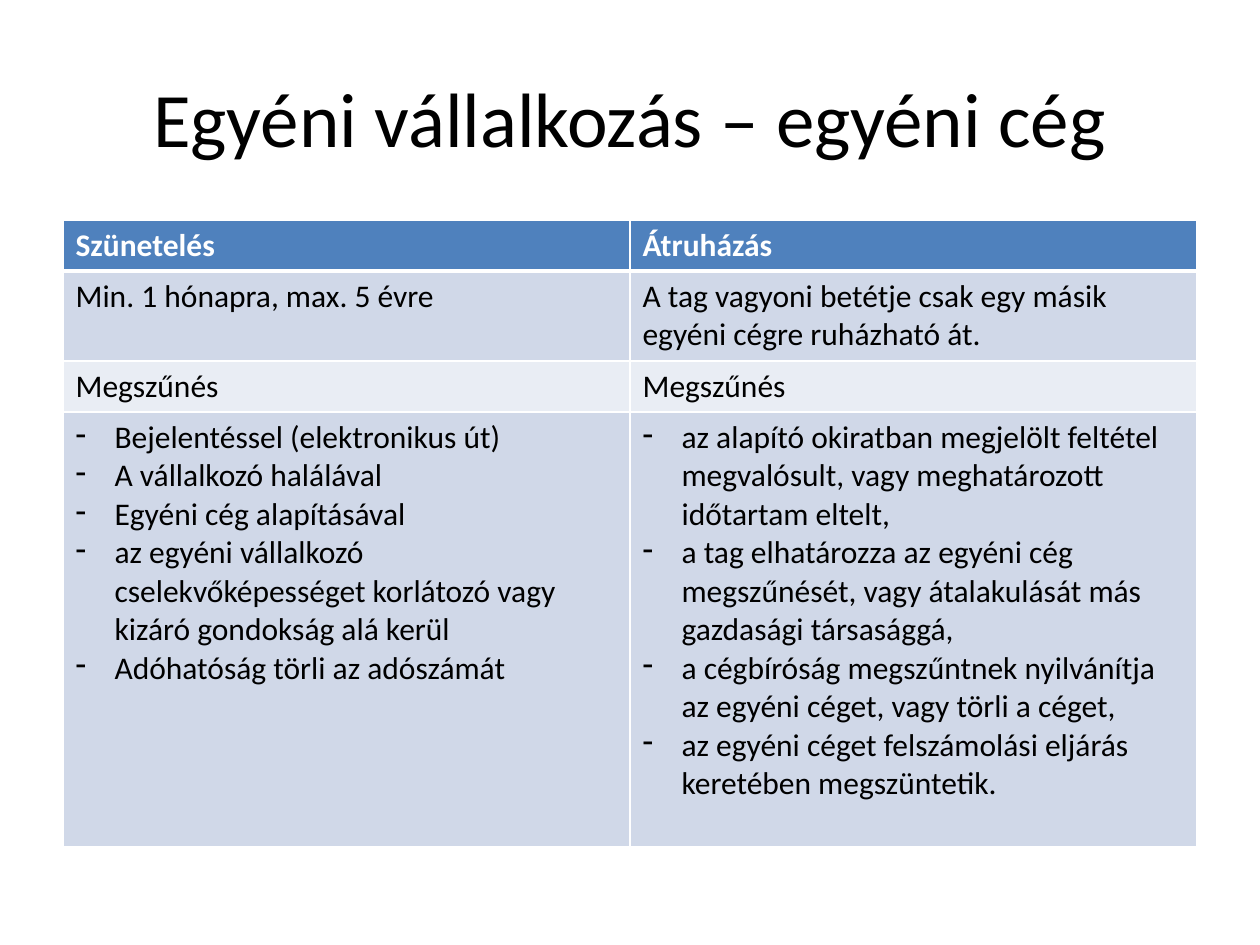
import dataclasses

import lxml.etree
import pptx
import pptx.dml.color
import pptx.enum.text
import pptx.oxml.ns
import pptx.util

EMU_PER_PX = 914400 / 126


def px(n):
    return pptx.util.Emu(round(n * EMU_PER_PX))


def rgb(value):
    return pptx.dml.color.RGBColor.from_string(value)


@dataclasses.dataclass(frozen=True)
class Theme:
    font: str = "Calibri"
    title_size: int = 44
    body_size: int = 18
    text: str = "000000"
    light: str = "FFFFFF"
    header: str = "4F81BD"
    bands: tuple = ("D0D8E8", "E9EDF4")
    line: int = 1
    header_line: int = 3
    indent: int = 39


class SlideBuilder:
    def __init__(self, slide, theme):
        self.s = slide
        self.theme = theme

    def style(self, p, size, color, bold=False):
        values = {"name": self.theme.font, "size": pptx.util.Pt(size), "bold": bold}
        for r in p.runs:
            for name, value in values.items():
                setattr(r.font, name, value)
            r.font.color.rgb = rgb(color)

    def title(self, text, left, top, width, height):
        sp = self.s.shapes.title
        box = {"left": left, "top": top, "width": width, "height": height}
        for name, value in box.items():
            setattr(sp, name, px(value))
        tf = sp.text_frame
        tf.text = text
        tf.vertical_anchor = pptx.enum.text.MSO_ANCHOR.MIDDLE
        p = tf.paragraphs[0]
        p.alignment = pptx.enum.text.PP_ALIGN.CENTER
        self.style(p, self.theme.title_size, self.theme.text)

    def bullet(self, p):
        pPr = p._p.get_or_add_pPr()
        indent = px(self.theme.indent)
        for name, value in {"marL": indent, "indent": -indent}.items():
            pPr.set(name, str(value))
        bu = lxml.etree.SubElement(pPr, pptx.oxml.ns.qn("a:buChar"))
        bu.set("char", "-")

    def borders(self, cell, widths):
        tcPr = cell._tc.get_or_add_tcPr()
        for i, (side, width) in enumerate(widths.items()):
            ln = lxml.etree.Element(pptx.oxml.ns.qn(f"a:ln{side}"))
            ln.set("w", str(pptx.util.Pt(width)))
            fill = lxml.etree.SubElement(ln, pptx.oxml.ns.qn("a:solidFill"))
            color = lxml.etree.SubElement(fill, pptx.oxml.ns.qn("a:srgbClr"))
            color.set("val", self.theme.light)
            tcPr.insert(i, ln)

    def cell(self, cell, content, row):
        th = self.theme
        header = row == 0
        bulleted = isinstance(content, list)
        tf = cell.text_frame
        tf.text = "\n".join(content) if bulleted else content
        for p in tf.paragraphs:
            self.style(p, th.body_size, th.light if header else th.text, header)
            if bulleted:
                self.bullet(p)
        cell.fill.solid()
        cell.fill.fore_color.rgb = rgb(th.header if header else th.bands[(row - 1) % 2])
        self.borders(cell, {
            "L": th.line,
            "R": th.line,
            "T": th.header_line if row == 1 else th.line,
            "B": th.header_line if header else th.line,
        })

    def table(self, rows, heights, left, top, width):
        cols = len(rows[0])
        frame = self.s.shapes.add_table(
            len(rows), cols, px(left), px(top), px(width), px(sum(heights)))
        table = frame.table
        for column in table.columns:
            column.width = px(width / cols)
        for i, (contents, height) in enumerate(zip(rows, heights)):
            table.rows[i].height = px(height)
            for j, content in enumerate(contents):
                self.cell(table.cell(i, j), content, i)


ROWS = [
    ["Szünetelés", "Átruházás"],
    ["Min. 1 hónapra, max. 5 évre",
     "A tag vagyoni betétje csak egy másik egyéni cégre ruházható át."],
    ["Megszűnés", "Megszűnés"],
    [
        [
            "Bejelentéssel (elektronikus út)",
            "A vállalkozó halálával",
            "Egyéni cég alapításával",
            "az egyéni vállalkozó cselekvőképességet korlátozó vagy kizáró "
            "gondokság alá kerül",
            "Adóhatóság törli az adószámát",
        ],
        [
            "az alapító okiratban megjelölt feltétel megvalósult, vagy "
            "meghatározott időtartam eltelt,",
            "a tag elhatározza az egyéni cég megszűnését, vagy átalakulását "
            "más gazdasági társasággá,",
            "a cégbíróság megszűntnek nyilvánítja az egyéni céget, vagy törli "
            "a céget,",
            "az egyéni céget felszámolási eljárás keretében megszüntetik.",
        ],
    ],
]


def main():
    prs = pptx.Presentation()
    prs.slide_width, prs.slide_height = px(1260), px(945)
    slide = SlideBuilder(prs.slides.add_slide(prs.slide_layouts[5]), Theme())
    slide.title("Egyéni vállalkozás – egyéni cég", 63, 38, 1134, 157)
    slide.table(ROWS, [51, 90, 51, 435], 63, 220, 1134)
    prs.save("out.pptx")


if __name__ == "__main__":
    main()
